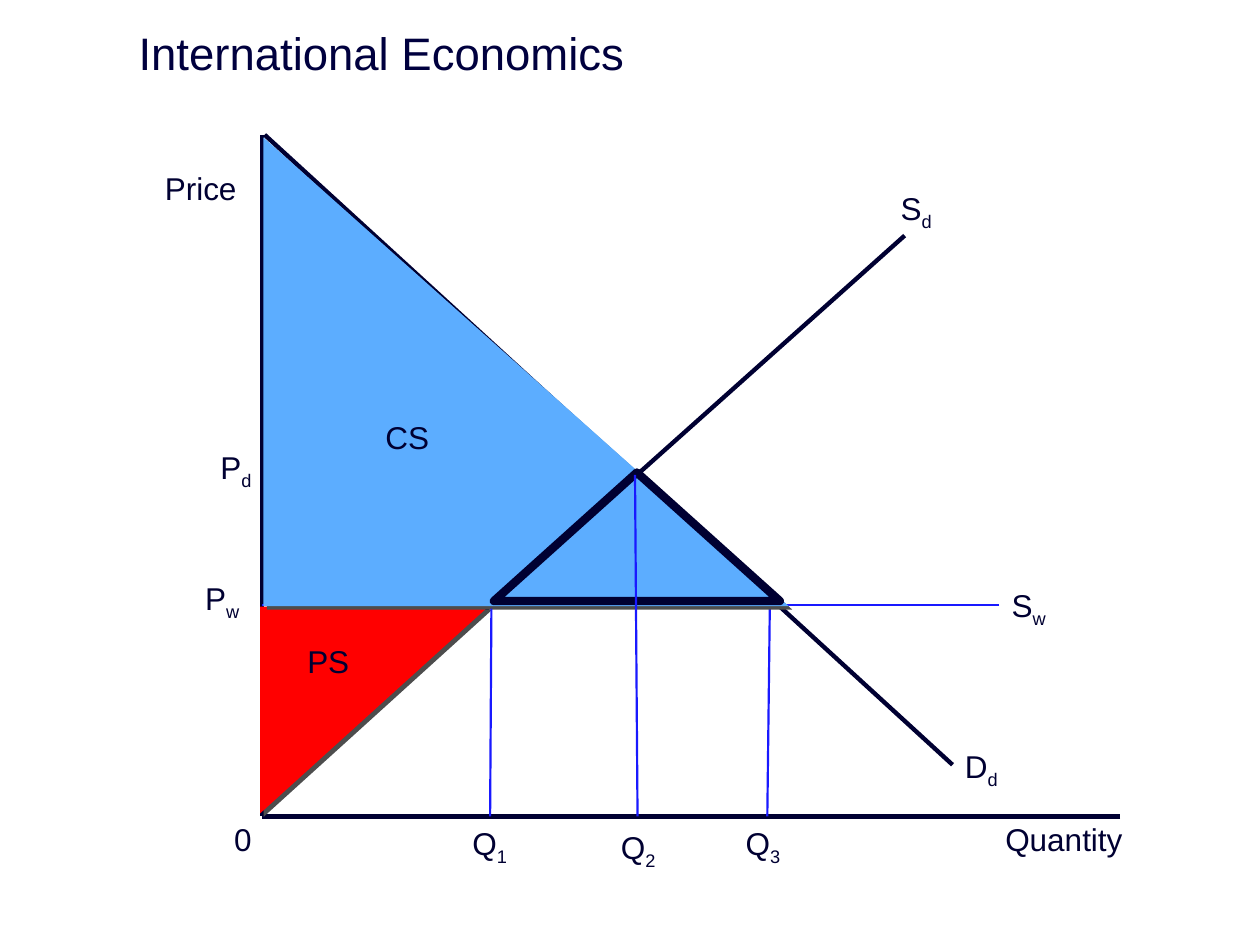
"""Build a slide on trade surplus: supply, demand and the world price."""
from pptx import Presentation
from pptx.dml.color import RGBColor
from pptx.enum.shapes import MSO_CONNECTOR, MSO_SHAPE
from pptx.enum.text import MSO_ANCHOR, PP_ALIGN
from pptx.oxml import parse_xml
from pptx.oxml.ns import nsdecls
from pptx.util import Inches, Pt

STRAIGHT = MSO_CONNECTOR.STRAIGHT
RIGHT, PEAK = MSO_SHAPE.RIGHT_TRIANGLE, MSO_SHAPE.ISOSCELES_TRIANGLE
LEFT, MIDDLE = PP_ALIGN.LEFT, MSO_ANCHOR.MIDDLE

THEME = {
    "font": "Arial", "title": 26, "label": 18,
    "head": "00003E", "ink": "000032", "guide": "1919FF",
    "cs": "5CADFF", "ps": "FF0000", "shade": "4D4D4D",
    "thick": 2.5, "thin": 1.25, "bold": 4.75,
}

COLS, ROWS = 10, 7.5
ZERO, BASE, TOP, WORLD = 2.08, 6.48, 1.07, 4.8
TALL = 0.4

TITLE = "International Economics"
CURVES = [
    ((ZERO, TOP), (ZERO, BASE)),
    ((8.89, BASE), (ZERO, BASE)),
    ((7.18, 1.87), (2.48, 6.07)),
    ((2.1, TOP), (7.56, 6.07)),
]
PRICE = [((7.93, WORLD), (ZERO, WORLD)), ((6.09, BASE), (6.11, WORLD))]
GUIDES = [((5.06, BASE), (5.04, 3.77)), ((3.89, BASE), (3.9, 4.83))]
AREAS = [
    (RIGHT, (2.15, 4.73, 1.64, 1.81), 90, "ps"),
    (RIGHT, (2.09, 1.09, 4.17, 3.72), 0, "cs"),
    (PEAK, (3.92, 3.75, 2.27, 1.02), 0, None),
]
LABELS = [
    ("Quantity", "", 7.88, 6.46, 1.29),
    ("0", "", 1.76, 6.46, 0.64),
    ("Price", "", 1.21, 1.29, 1.07),
    ("S", "d", 7.05, 1.45, 0.73),
    ("D", "d", 7.56, 5.88, 0.81),
    ("P", "d", 1.65, 3.51, 0.75),
    ("P", "w", 1.53, 4.55, 0.75),
    ("S", "w", 7.93, 4.6, 0.73),
    ("CS", "", 2.96, 3.27, 0.81),
    ("PS", "", 2.34, 5.05, 0.81),
    ("Q", "1", 3.65, 6.49, 0.5),
    ("Q", "2", 4.83, 6.52, 0.5),
    ("Q", "3", 5.82, 6.49, 0.5),
]


def tint(name):
    return RGBColor.from_string(THEME[name])


def grid(*spots):
    return [Inches(spot) for spot in spots]


def style(para, size, color):
    para.font.name = THEME["font"]
    para.font.size = Pt(THEME[size])
    para.font.color.rgb = tint(color)


def add_title(slide):
    head = slide.shapes.title
    head.left, head.top, head.width, head.height = grid(1, 0.16, 9, 0.51)
    head.text_frame.text = TITLE
    head.text_frame.vertical_anchor = MIDDLE
    para = head.text_frame.paragraphs[0]
    para.alignment = LEFT
    style(para, "title", "head")


def add_lines(slide, lines, color, width):
    for start, end in lines:
        line = slide.shapes.add_connector(STRAIGHT, *grid(*start, *end))
        line.line.color.rgb = tint(color)
        line.line.width = Pt(THEME[width])
        line._element.spPr.append(parse_xml(f"<a:effectLst {nsdecls('a')}/>"))


def add_shade(shape):
    shape._element.spPr.append(parse_xml(
        f'<a:effectLst {nsdecls("a")}>'
        f'<a:outerShdw dist="{Pt(2.8)}" dir="2700000" algn="ctr" rotWithShape="0">'
        f'<a:srgbClr val="{THEME["shade"]}"/></a:outerShdw></a:effectLst>'))


def add_areas(slide):
    for kind, box, turn, color in AREAS:
        area = slide.shapes.add_shape(kind, *grid(*box))
        area.rotation = turn
        if color:
            area.fill.solid()
            area.fill.fore_color.rgb = tint(color)
            area.line.fill.background()
            add_shade(area)
        else:
            area.fill.background()
            area.line.color.rgb = tint("ink")
            area.line.width = Pt(THEME["bold"])
            area.shadow.inherit = False


def add_labels(slide):
    for name, sub, left, top, width in LABELS:
        box = slide.shapes.add_textbox(*grid(left, top, width, TALL))
        box.text_frame.word_wrap = True
        para = box.text_frame.paragraphs[0]
        para.add_run().text = name
        if sub:
            run = para.add_run()
            run.text = sub
            run._r.get_or_add_rPr().set("baseline", "-25000")
        style(para, "label", "ink")


def main():
    deck = Presentation()
    deck.slide_width, deck.slide_height = grid(COLS, ROWS)
    slide = deck.slides.add_slide(deck.slide_layouts[5])
    add_title(slide)
    add_lines(slide, CURVES, "ink", "thick")
    add_lines(slide, PRICE, "guide", "thin")
    add_areas(slide)
    add_lines(slide, GUIDES, "guide", "thin")
    add_labels(slide)
    deck.save("out.pptx")


if __name__ == "__main__":
    main()
